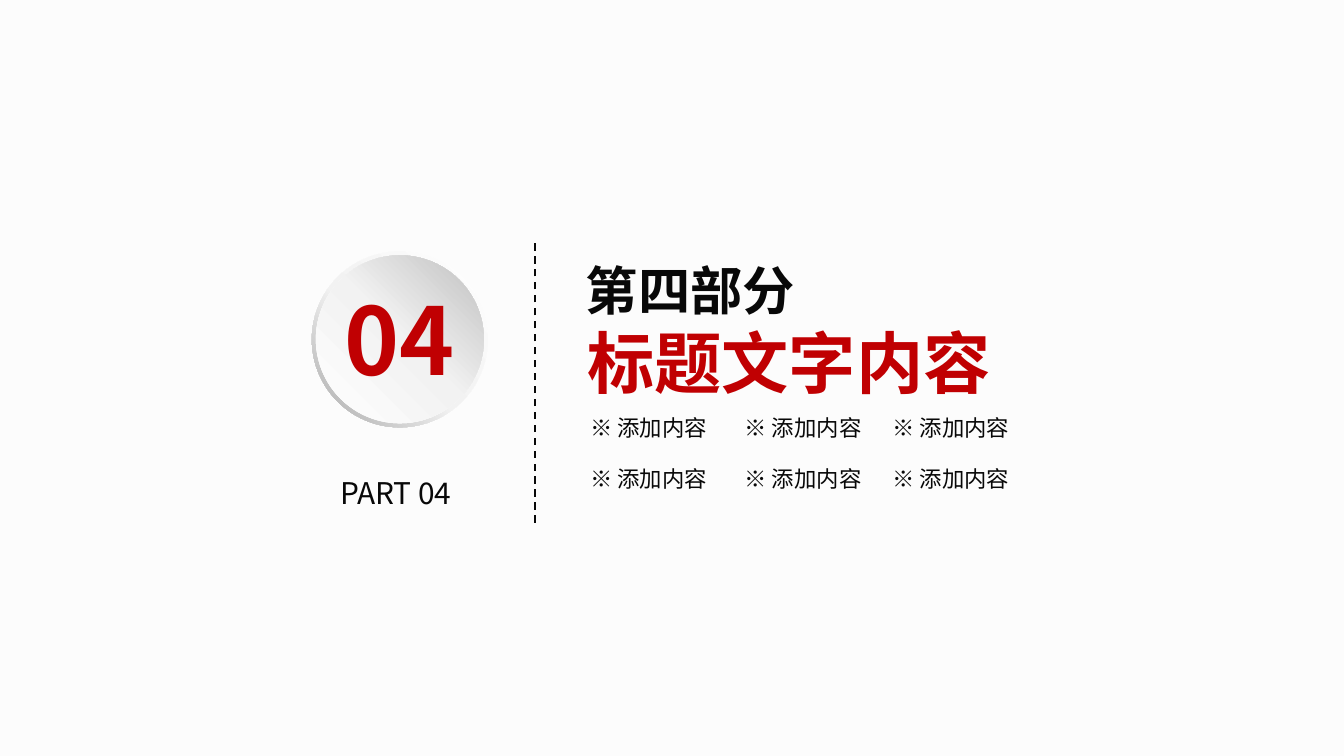
from dataclasses import dataclass
from itertools import product

from lxml.etree import SubElement
from pptx import Presentation
from pptx.dml.color import RGBColor
from pptx.enum.dml import MSO_LINE
from pptx.enum.shapes import MSO_CONNECTOR, MSO_SHAPE
from pptx.enum.text import MSO_ANCHOR, MSO_AUTO_SIZE, PP_ALIGN
from pptx.oxml.ns import qn
from pptx.util import Inches, Pt

FONT = "Noto Sans CJK SC"
COLORS = {
    "background": "FCFCFC",
    "ink": "080808",
    "accent": "C00002",
    "white": "FFFFFF",
    "pale": "F2F2F2",
    "silver": "BFBFBF",
    "gray": "A6A6A6",
}


@dataclass(frozen=True)
class Disc:
    preset: MSO_SHAPE
    left: float
    top: float
    size: float
    stops: tuple[tuple[int, str], ...]
    angle: int  # counter-clockwise degrees


@dataclass(frozen=True)
class Label:
    text: str
    left: float
    top: float
    width: float
    height: float
    size: int
    color: str = "ink"
    bold: bool = False
    inset_x: float = 0
    inset_y: float = 0


BADGE_DISCS = (
    Disc(MSO_SHAPE.DONUT, 2.32, 1.87, 1.31,
         ((0, "white"), (55, "pale"), (100, "gray")), 225),
    Disc(MSO_SHAPE.OVAL, 2.35, 1.9, 1.25,
         ((0, "white"), (51, "pale"), (100, "silver")), 45),
)
BADGE_NUMBER = Label("04", 2.56, 2.1, 0.99, 0.84, 50, "accent", True)
PART_LABEL = Label("PART 04", 2.53, 3.53, 0.99, 0.27, 16)
TOPIC_ROWS = (3.05, 3.43)
TOPIC_COLUMNS = (4.32, 5.47, 6.57)


def rgb(color: str) -> RGBColor:
    return RGBColor.from_string(COLORS[color])


def write_text(paragraph, text: str, *, size: int, color: str = "ink",
               bold: bool = False) -> None:
    run = paragraph.add_run()
    run.text = text
    font = run.font
    font.name, font.size, font.bold = FONT, Pt(size), bold
    font.color.rgb = rgb(color)
    SubElement(run._r.get_or_add_rPr(), qn("a:ea"), typeface=FONT)


def add_label(shapes, label: Label) -> None:
    box = shapes.add_textbox(Inches(label.left), Inches(label.top),
                             Inches(label.width), Inches(label.height))
    frame = box.text_frame
    frame.word_wrap = True
    frame.auto_size = MSO_AUTO_SIZE.SHAPE_TO_FIT_TEXT
    frame.margin_left = frame.margin_right = Inches(label.inset_x)
    frame.margin_top = frame.margin_bottom = Inches(label.inset_y)
    write_text(frame.paragraphs[0], label.text, size=label.size,
               color=label.color, bold=label.bold)


def add_disc(shapes, disc: Disc) -> None:
    shape = shapes.add_shape(disc.preset, Inches(disc.left), Inches(disc.top),
                             Inches(disc.size), Inches(disc.size))
    if disc.preset == MSO_SHAPE.DONUT:
        shape.adjustments[0] = 0.05
    shape.shadow.inherit = False
    shape.line.fill.background()
    shape.fill.gradient()
    shape.fill.gradient_angle = disc.angle
    stop_list = shape._element.spPr.find(".//" + qn("a:gsLst"))
    for old_stop in list(stop_list):
        stop_list.remove(old_stop)
    for percent, color in disc.stops:
        stop = SubElement(stop_list, qn("a:gs"), pos=str(percent * 1000))
        SubElement(stop, qn("a:srgbClr"), val=COLORS[color])


def add_heading(slide) -> None:
    title = slide.shapes.title
    title.left, title.top = Inches(4.21), Inches(1.87)
    title.width, title.height = Inches(3.23), Inches(1.18)
    frame = title.text_frame
    frame.word_wrap = False
    frame.auto_size = MSO_AUTO_SIZE.SHAPE_TO_FIT_TEXT
    frame.vertical_anchor = MSO_ANCHOR.TOP
    frame.margin_left, frame.margin_right = Inches(0.04), Inches(0.06)
    part = frame.paragraphs[0]
    part.alignment = PP_ALIGN.LEFT
    part._p.get_or_add_pPr().set("marL", str(Inches(0.11)))
    write_text(part, "第四部分", size=28, bold=True)
    topic = frame.add_paragraph()
    topic.alignment = PP_ALIGN.CENTER
    write_text(topic, "标题文字内容", size=36, color="accent", bold=True)


def add_divider(shapes) -> None:
    divider = shapes.add_connector(MSO_CONNECTOR.STRAIGHT, Inches(3.98),
                                   Inches(3.89), Inches(3.98), Inches(1.79))
    divider.line.color.rgb = rgb("ink")
    divider.line.width = Pt(1)
    divider.line.dash_style = MSO_LINE.DASH
    SubElement(divider._element.spPr, qn("a:effectLst"))


def main() -> None:
    deck = Presentation()
    deck.slide_width = Inches(10)
    deck.slide_height = deck.slide_width * 9 // 16
    slide = deck.slides.add_slide(deck.slide_layouts.get_by_name("Title Only"))
    slide.background.fill.solid()
    slide.background.fill.fore_color.rgb = rgb("background")

    add_heading(slide)
    add_divider(slide.shapes)
    add_label(slide.shapes, PART_LABEL)
    for top, left in product(TOPIC_ROWS, TOPIC_COLUMNS):
        add_label(slide.shapes, Label("※ 添加内容", left, top, 1.08, 0.27, 12,
                                      inset_x=0.07, inset_y=0.03))

    badge = slide.shapes.add_group_shape()
    for disc in BADGE_DISCS:
        add_disc(badge.shapes, disc)
    add_label(badge.shapes, BADGE_NUMBER)

    deck.save("out.pptx")


if __name__ == "__main__":
    main()
